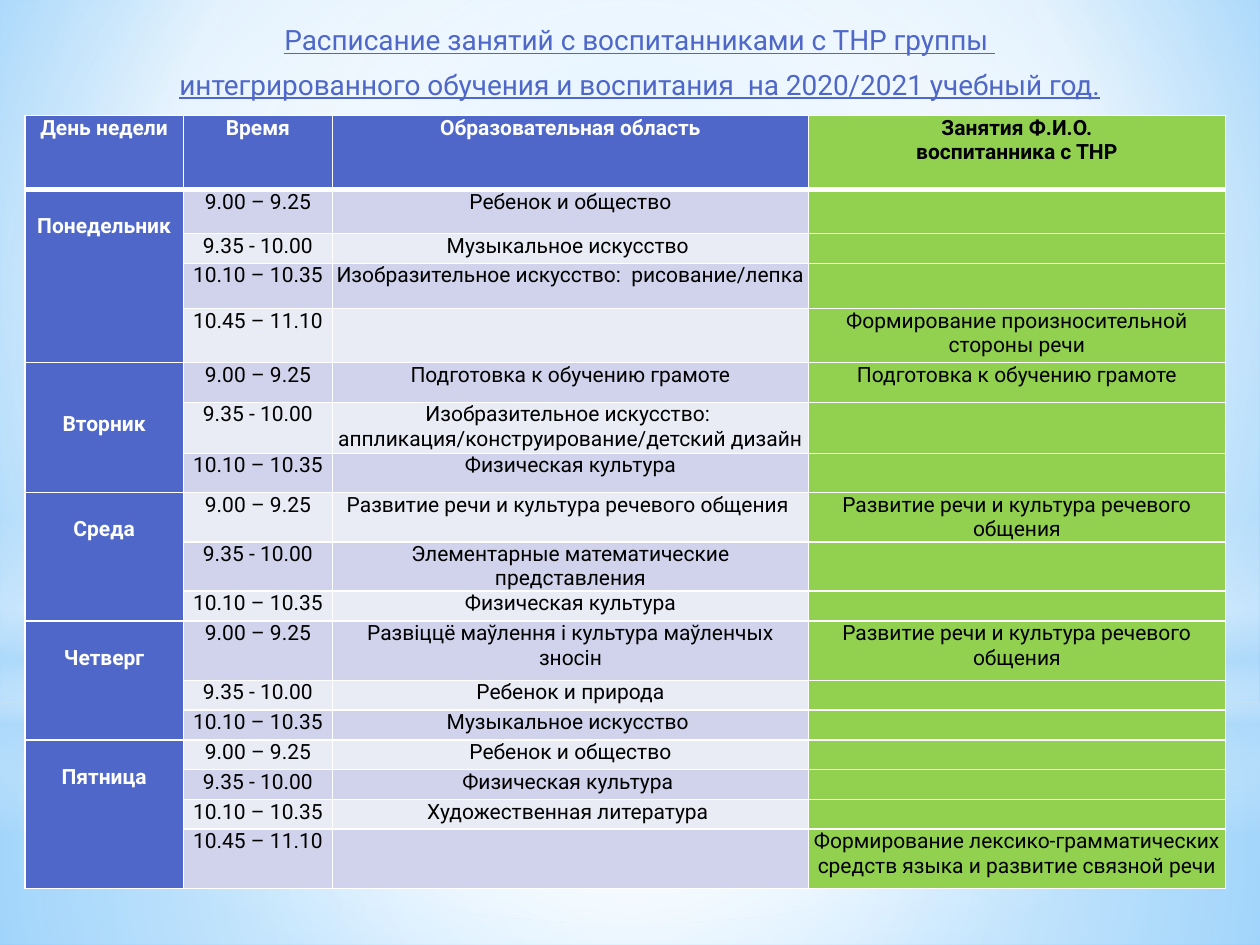
import dataclasses

import lxml.etree
import pptx
import pptx.dml.color
import pptx.enum.shapes
import pptx.enum.text
import pptx.oxml.ns
import pptx.util

Cm = pptx.util.Cm
Pt = pptx.util.Pt
qn = pptx.oxml.ns.qn
MID = pptx.enum.text.PP_ALIGN.CENTER
SHAPE = pptx.enum.shapes.MSO_SHAPE


@dataclasses.dataclass(frozen=True)
class Theme:
    """Colours and type sizes of the slide."""
    font: str = "Roboto"
    head: int = 16
    text: int = 12
    blue: str = "4E67C8"
    green: str = "92D050"
    white: str = "FFFFFF"
    black: str = "000000"
    sky: str = "B4DCFA"
    deep: str = "5BB9FF"
    pale: str = "9ED5FF"
    bands: tuple = ("E9EBF5", "D0D3EB")


LOOK = Theme()
TITLE = ("Расписание занятий с воспитанниками с ТНР группы \n"
         "интегрированного обучения и воспитания  на 2020/2021 учебный год.")
HEADS = ("День недели", "Время", "Образовательная область",
         "Занятия Ф.И.О.\nвоспитанника с ТНР")
TIMES = ("9.00 – 9.25", "9.35 - 10.00", "10.10 – 10.35", "10.45 – 11.10")
SPEECH = "Развитие речи и культура речевого общения"
LETTERS = "Подготовка к обучению грамоте"
DAYS = (
    ("Понедельник", 0.5, (
        ("Ребенок и общество", ""),
        ("Музыкальное искусство ", ""),
        ("Изобразительное искусство:  рисование/лепка ", ""),
        ("", "Формирование произносительной стороны речи"))),
    ("Вторник", 1, (
        (LETTERS, LETTERS),
        ("Изобразительное искусство:  аппликация/конструирование/детский дизайн", ""),
        ("Физическая культура", ""))),
    ("Среда", 0.5, (
        (SPEECH + " ", SPEECH),
        ("Элементарные математические представления", ""),
        ("Физическая культура", ""))),
    ("Четверг", 0.5, (
        ("Развіццё маўлення і культура маўленчых зносін", SPEECH),
        ("Ребенок и природа", ""),
        ("Музыкальное искусство ", ""))),
    ("Пятница", 0.5, (
        ("Ребенок и общество", ""),
        ("Физическая культура ", ""),
        ("Художественная литература ", ""),
        ("", "Формирование лексико-грамматических средств языка "
             "и развитие связной речи"))),
)
WIDTHS = (3.2, 3, 9.6, 8.4)
HEIGHTS = (1.49, 0.89, 0.6, 0.91, 1.09, 0.8, 1.03, 0.79, 0.99, 0.99,
           0.6, 1.2, 0.6, 0.6, 0.6, 0.6, 0.6, 1.2)


def put(item, values):
    """Set each named value on the item."""
    for name, value in values.items():
        setattr(item, name, value)


def tint(code):
    """Turn a hex code into a colour."""
    return pptx.dml.color.RGBColor.from_string(code)


def node(base, tag, **values):
    """Add a drawing element with its attributes."""
    return lxml.etree.SubElement(base, qn("a:" + tag),
                                 {key: str(val) for key, val in values.items()})


def blend(fill, base, stops, focus=None):
    """Fill the base with a radial gradient, or a vertical one without focus."""
    fill.background()
    grad = lxml.etree.Element(qn("a:gradFill"), rotWithShape="1")
    marks = node(grad, "gsLst")
    for place, code, solid in stops:
        stop = node(marks, "gs", pos=place * 1000)
        node(node(stop, "srgbClr", val=code), "alpha", val=solid * 1000)
    if focus:
        sides = {side: part * 1000 for side, part in zip("ltrb", focus)}
        node(node(grad, "path", path="circle"), "fillToRect", **sides)
    else:
        node(grad, "lin", ang=90 * 60000, scaled=0)
    base.replace(base.find(qn("a:noFill")), grad)


def glow(slide, kind, top, height, stops, focus=None):
    """Add a full-width soft shape of light."""
    shape = slide.shapes.add_shape(kind, 0, Cm(top), Cm(25.4), Cm(height))
    shape.shadow.inherit = False
    shape.line.fill.background()
    blend(shape.fill, shape._element.spPr, stops, focus)


def write(frame, text, size, code, bold=False, line=None, gaps=None):
    """Write centred paragraphs in one style."""
    frame.text = text
    for para in frame.paragraphs:
        put(para, {"alignment": MID, **(gaps or {})})
        for run in para.runs:
            put(run.font, {"name": LOOK.font, "size": Pt(size),
                           "bold": bold, "underline": line})
            run.font.color.rgb = tint(code)
        if not para.runs:
            node(para._p, "endParaRPr", sz=size * 100)


def frame(cell, row):
    """Draw the white cell borders, thick under the header."""
    wide = {"T": 3 if row == 1 else 1, "B": 3 if row == 0 else 1}
    props = cell._tc.get_or_add_tcPr()
    for spot, side in enumerate("LRTB"):
        edge = lxml.etree.Element(qn("a:ln" + side), w=str(Pt(wide.get(side, 1))))
        node(node(edge, "solidFill"), "srgbClr", val=LOOK.white)
        props.insert(spot, edge)


def box(grid, row, col, text, drop=0):
    """Fill one table cell."""
    cell = grid.cell(row, col)
    lead = row == 0 or col == 0
    back = LOOK.green if col == 3 else LOOK.blue if lead else LOOK.bands[row % 2]
    ink = LOOK.white if back == LOOK.blue else LOOK.black
    put(cell, {"margin_left": Cm(0.08), "margin_right": Cm(0.08),
               "margin_top": Cm(drop), "margin_bottom": 0})
    cell.fill.solid()
    cell.fill.fore_color.rgb = tint(back)
    write(cell.text_frame, text, LOOK.text, ink, lead)
    frame(cell, row)


def plan(slide):
    """Add the weekly timetable."""
    grid = slide.shapes.add_table(len(HEIGHTS), len(WIDTHS), Cm(0.5), Cm(2.33),
                                  Cm(sum(WIDTHS)), Cm(sum(HEIGHTS))).table
    put(grid, {"first_row": False, "horz_banding": False})
    for col, width in zip(grid.columns, WIDTHS):
        col.width = Cm(width)
    for row, height in zip(grid.rows, HEIGHTS):
        row.height = Cm(height)
    for col, text in enumerate(HEADS):
        box(grid, 0, col, text)
    row = 1
    for day, drop, tasks in DAYS:
        first = row
        for time, (area, task) in zip(TIMES, tasks):
            for col, text in enumerate(("", time, area, task)):
                box(grid, row, col, text)
            row += 1
        grid.cell(first, 0).merge(grid.cell(row - 1, 0))
        grid.cell(first, 0).margin_top = Cm(drop)
        write(grid.cell(first, 0).text_frame, day, LOOK.text, LOOK.white, True)


def scene(slide):
    """Paint the backdrop and its lights."""
    white, sky, core = LOOK.white, LOOK.sky, (50, 50, 50, 50)
    fill = slide.background.fill
    fill.background()
    blend(fill, next(slide._element.iter(qn("p:bgPr"))),
          ((0, LOOK.pale, 100), (60, white, 100), (100, LOOK.deep, 100)),
          (20, 10, 20, 60))
    glow(slide, SHAPE.RECTANGLE, 14.17, 4.88,
         ((0, white, 91), (37, white, 76), (100, sky, 79)), core)
    glow(slide, SHAPE.RECTANGLE, 0, 14.17,
         ((0, white, 89), (48, white, 62), (100, sky, 79)), core)
    glow(slide, SHAPE.RECTANGLE, 10.46, 6.35,
         ((0, white, 0), (29, white, 30), (45, sky, 40),
          (55, white, 26), (65, sky, 60), (100, white, 0)))
    glow(slide, SHAPE.OVAL, 4.45, 14.17, ((0, white, 100), (56, white, 0)), core)


def head(slide):
    """Place the title above the lights."""
    title = slide.shapes.title
    put(title, {"left": Cm(1.05), "top": Cm(0.33),
                "width": Cm(23.7), "height": Cm(2.39)})
    put(title.text_frame, {"vertical_anchor": pptx.enum.text.MSO_ANCHOR.TOP,
                           "auto_size": pptx.enum.text.MSO_AUTO_SIZE.NONE,
                           "word_wrap": True})
    write(title.text_frame, TITLE, LOOK.head, LOOK.blue, line=True,
          gaps={"space_before": Pt(3.2), "space_after": Pt(3)})
    slide.shapes._spTree.append(title._element)


def main():
    """Build and save the slide."""
    deck = pptx.Presentation()
    put(deck, {"slide_width": Cm(25.4), "slide_height": Cm(19.05)})
    slide = deck.slides.add_slide(deck.slide_layouts[5])
    scene(slide)
    head(slide)
    plan(slide)
    deck.save("out.pptx")


if __name__ == "__main__":
    main()
